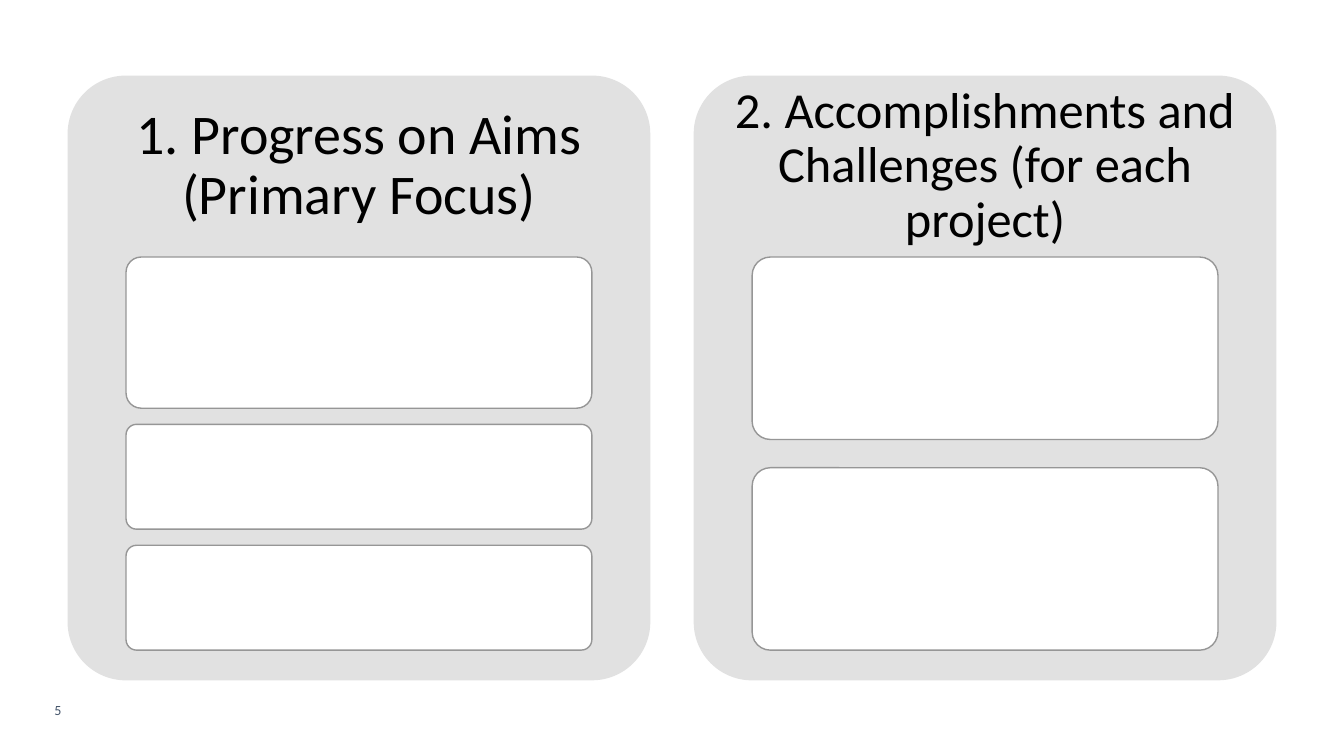
import dataclasses

import pptx
import pptx.dml.color
import pptx.enum.shapes
import pptx.enum.text
import pptx.util

Inches = pptx.util.Inches
Pt = pptx.util.Pt

COLORS = {
    "panel": "E1E1E1",
    "card": "FFFFFF",
    "border": "969696",
    "text": "000000",
    "number": "44546A",
}
FONT = "Calibri"
TOP, WIDTH, HEIGHT = 0.75, 5.78, 6.0
HEAD = 1.8
INSET = 0.58
STACK = 3.9


@dataclasses.dataclass
class Panel:
    title: str
    left: float
    size: int
    margin: float
    holder: int
    cards: tuple[float, ...]


PANELS = [
    Panel("1. Progress on Aims (Primary Focus)", 0.67, 40, 0.17, 1, (1.5, 1.04, 1.04)),
    Panel("2. Accomplishments and Challenges (for each project)", 6.88, 36, 0.15, 3, (1.81, 1.81)),
]


def color(name: str) -> pptx.dml.color.RGBColor:
    return pptx.dml.color.RGBColor.from_string(COLORS[name])


def add_run(para, text: str, size: int, ink: str) -> None:
    run = para.add_run()
    run.text = text
    run.font.name = FONT
    run.font.size = Pt(size)
    run.font.bold = False
    run.font.color.rgb = color(ink)


def add_box(slide, left: float, top: float, width: float, height: float,
            fill: str, border: str | None = None) -> None:
    box = slide.shapes.add_shape(
        pptx.enum.shapes.MSO_SHAPE.ROUNDED_RECTANGLE,
        Inches(left), Inches(top), Inches(width), Inches(height))
    box.adjustments[0] = 0.1
    box.shadow.inherit = False
    box.fill.solid()
    box.fill.fore_color.rgb = color(fill)
    if border:
        box.line.color.rgb = color(border)
        box.line.width = Pt(1)
    else:
        box.line.fill.background()


def add_head(slide, panel: Panel) -> None:
    """Fill the panel's heading placeholder and bring it to the front."""
    head = slide.placeholders[panel.holder]
    slide.shapes.element.append(head.element)
    head.left, head.top = Inches(panel.left), Inches(TOP)
    head.width, head.height = Inches(WIDTH), Inches(HEAD)
    frame = head.text_frame
    frame.word_wrap = True
    frame.auto_size = pptx.enum.text.MSO_AUTO_SIZE.NONE
    frame.vertical_anchor = pptx.enum.text.MSO_ANCHOR.MIDDLE
    frame.margin_left = frame.margin_right = Inches(panel.margin)
    frame.margin_top = frame.margin_bottom = Inches(panel.margin)
    para = frame.paragraphs[0]
    para.alignment = pptx.enum.text.PP_ALIGN.CENTER
    para.line_spacing = 0.9
    para.space_before = Pt(0)
    para.space_after = Pt(panel.size * 0.35)
    add_run(para, panel.title, panel.size, "text")


def add_panel(slide, panel: Panel) -> None:
    """Draw a panel whose cards fill the stack with equal gaps."""
    add_box(slide, panel.left, TOP, WIDTH, HEIGHT, "panel")
    add_head(slide, panel)
    gap = (STACK - sum(panel.cards)) / (len(panel.cards) - 1)
    top = TOP + HEAD
    for height in panel.cards:
        add_box(slide, panel.left + INSET, top, WIDTH - 2 * INSET, height, "card", "border")
        top += height + gap


def add_number(slide, text: str) -> None:
    box = slide.shapes.add_textbox(Inches(0.44), Inches(6.91), Inches(0.39), Inches(0.27))
    box.text_frame.word_wrap = False
    box.text_frame.auto_size = pptx.enum.text.MSO_AUTO_SIZE.SHAPE_TO_FIT_TEXT
    add_run(box.text_frame.paragraphs[0], text, 10, "number")


def main() -> None:
    deck = pptx.Presentation()
    deck.slide_width, deck.slide_height = Inches(13.33), Inches(7.5)
    slide = deck.slides.add_slide(deck.slide_layouts.get_by_name("Comparison"))
    add_number(slide, "5")
    for panel in PANELS:
        add_panel(slide, panel)
    for holder in list(slide.placeholders):
        if not holder.text_frame.text:
            slide.shapes.element.remove(holder.element)
    deck.save("out.pptx")


if __name__ == "__main__":
    main()
